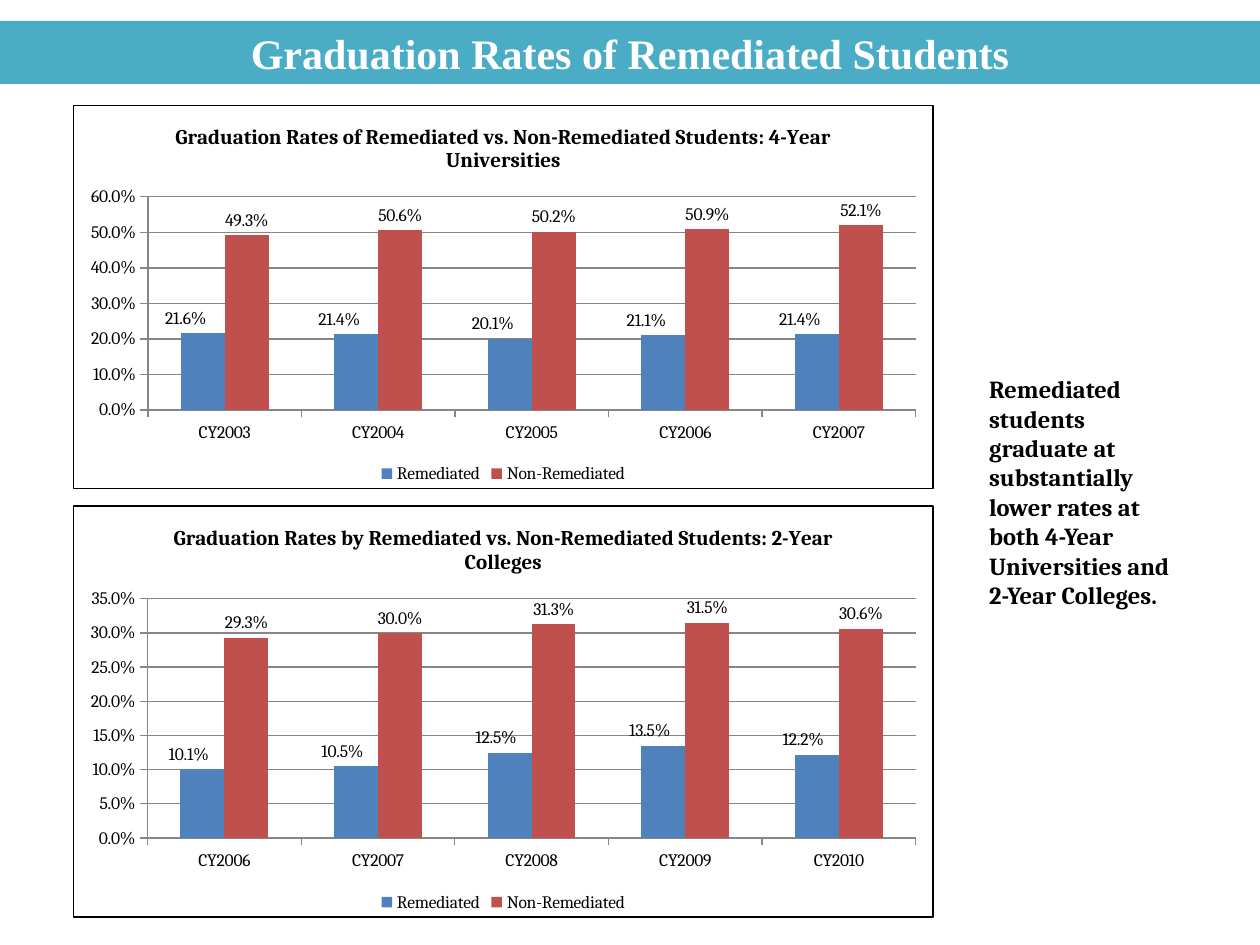
from lxml import etree
from pptx import Presentation
from pptx import util as u
from pptx.chart import data as chart_data
from pptx.dml import color
from pptx.enum import chart as c, text as t
from pptx.oxml import ns

TITLE = "Graduation Rates of Remediated Students"
TAKEAWAY = ("Remediated students graduate at substantially lower rates at both "
            "4-Year Universities and 2-Year Colleges.")
SERIES_COLORS = {"Remediated": "4F81BD", "Non-Remediated": "C0504D"}
CHARTS = [
    {"title": "Graduation Rates of Remediated vs. Non-Remediated Students: 4-Year Universities",
     "first_year": 2003, "top": 2.11, "height": 7.75, "label_shift": -0.02,
     "rates": [(21.6, 21.4, 20.1, 21.1, 21.4), (49.3, 50.6, 50.2, 50.9, 52.1)]},
    {"title": "Graduation Rates by Remediated vs. Non-Remediated Students: 2-Year Colleges",
     "first_year": 2006, "top": 10.19, "height": 8.31, "label_shift": -0.016,
     "rates": [(10.1, 10.5, 12.5, 13.5, 12.2), (29.3, 30.0, 31.3, 31.5, 30.6)]},
]
CHART_LEFT, CHART_WIDTH = 1.47, 17.35
PERCENT = "0.0%"


def rgb(value):
    return color.RGBColor.from_string(value)


def format_font(font, name, size, value, bold=False):
    font.name, font.size, font.bold = name, u.Pt(size), bold
    font.color.rgb = rgb(value)


def add_border(chart):
    border = etree.fromstring(
        f'<c:spPr {ns.nsdecls("c", "a")}>'
        '<a:solidFill><a:srgbClr val="FFFFFF"/></a:solidFill>'
        '<a:ln w="9525"><a:solidFill><a:srgbClr val="000000"/></a:solidFill></a:ln></c:spPr>')
    chart.element.find(ns.qn("c:chart")).addnext(border) if hasattr(chart, "element") else \
        chart._chartSpace.find(ns.qn("c:chart")).addnext(border)


def shift_labels(series, shift):
    for index, _ in enumerate(series.values):
        series.points[index].data_label.position = c.XL_LABEL_POSITION.OUTSIDE_END
    for label in series._element.iter(ns.qn("c:dLbl")):
        layout = etree.fromstring(
            f'<c:layout {ns.nsdecls("c")}><c:manualLayout>'
            f'<c:x val="{shift}"/><c:y val="0"/></c:manualLayout></c:layout>')
        label.find(ns.qn("c:idx")).addnext(layout)


def add_rate_chart(slide, content):
    data = chart_data.CategoryChartData(number_format=PERCENT)
    data.categories = [f"CY{content['first_year'] + i}" for i in range(5)]
    for name, rates in zip(SERIES_COLORS, content["rates"]):
        data.add_series(name, [round(rate / 100, 3) for rate in rates])
    chart = slide.shapes.add_chart(
        c.XL_CHART_TYPE.COLUMN_CLUSTERED, u.Cm(CHART_LEFT), u.Cm(content["top"]),
        u.Cm(CHART_WIDTH), u.Cm(content["height"]), data).chart
    format_font(chart.font, "Cambria", 10, "000000")
    chart.has_title = True
    title = chart.chart_title.text_frame
    title.text = content["title"]
    format_font(title.paragraphs[0].runs[0].font, "Cambria", 12, "000000", True)
    chart.has_legend = True
    chart.legend.position = c.XL_LEGEND_POSITION.BOTTOM
    chart.legend.include_in_layout = False

    value_axis = chart.value_axis
    value_axis.tick_labels.number_format = PERCENT
    value_axis.tick_labels.number_format_is_linked = False
    for line in (value_axis.format.line, chart.category_axis.format.line,
                 value_axis.major_gridlines.format.line):
        line.color.rgb = rgb("868686")
        line.width = u.Pt(0.75)

    plot = chart.plots[0]
    plot.gap_width, plot.overlap, plot.vary_by_categories = 150, 0, False
    for series in plot.series:
        series.format.fill.solid()
        series.format.fill.fore_color.rgb = rgb(SERIES_COLORS[series.name])
        labels = series.data_labels
        labels.show_value = True
        labels.number_format, labels.number_format_is_linked = PERCENT, False
        labels.position = c.XL_LABEL_POSITION.OUTSIDE_END
    shift_labels(plot.series[0], content["label_shift"])
    add_border(chart)


def place(shape, left, top, width, height):
    shape.left, shape.top, shape.width, shape.height = map(u.Cm, (left, top, width, height))


def main():
    presentation = Presentation()
    presentation.slide_width, presentation.slide_height = u.Cm(25.4), u.Cm(19.05)
    slide = presentation.slides.add_slide(presentation.slide_layouts[5])

    title = slide.shapes.title
    place(title, 0, 0.42, 25.4, 1.27)
    title.fill.solid()
    title.fill.fore_color.rgb = rgb("4BACC6")
    title.text_frame.text = TITLE
    title.text_frame.vertical_anchor = t.MSO_ANCHOR.MIDDLE
    title.text_frame.paragraphs[0].alignment = t.PP_ALIGN.CENTER
    format_font(title.text_frame.paragraphs[0].runs[0].font,
                "Times New Roman", 24, "FFFFFF", True)

    takeaway = slide.shapes.add_textbox(u.Cm(19.69), u.Cm(7.42), u.Cm(4.45), u.Cm(5.64))
    takeaway.text_frame.word_wrap = True
    takeaway.text_frame.text = TAKEAWAY
    format_font(takeaway.text_frame.paragraphs[0].runs[0].font, "Cambria", 14, "000000", True)

    for content in CHARTS:
        add_rate_chart(slide, content)
    presentation.save("out.pptx")


if __name__ == "__main__":
    main()
